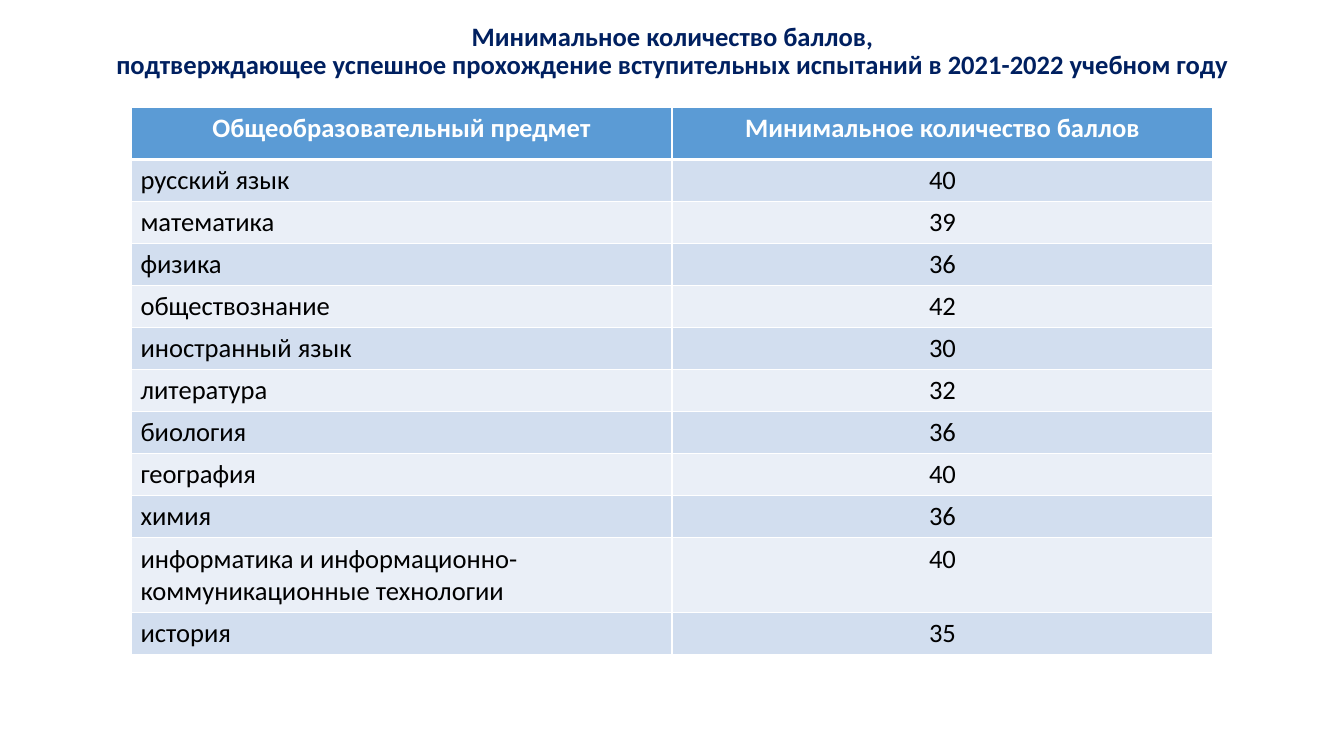
import pptx
import pptx.util
import pptx.dml.color
import pptx.enum.text
import pptx.oxml
import pptx.oxml.ns

Inches = pptx.util.Inches
Align = pptx.enum.text.PP_ALIGN

TITLE = (
    "Минимальное количество баллов,",
    "подтверждающее успешное прохождение вступительных испытаний в 2021-2022 учебном году",
)
HEADS = ("Общеобразовательный предмет", "Минимальное количество баллов")
SCORES = (
    ("русский язык", 40),
    ("математика", 39),
    ("физика", 36),
    ("обществознание", 42),
    ("иностранный язык", 30),
    ("литература", 32),
    ("биология", 36),
    ("география", 40),
    ("химия", 36),
    ("информатика и информационно-коммуникационные технологии", 40),
    ("история", 35),
)
THEME = {
    "font": "Calibri", "size": 20,
    "title": "002060", "head": "5B9BD5", "bands": ("D2DEEF", "EAEFF7"),
    "light": "FFFFFF", "dark": "000000", "thin": 1, "thick": 3,
}
HEAD_H, ROW_H, TALL_H = 0.55, 0.44, 0.78
COL_W = 5.66
WRAP = 40  # longest subject that fits on one line, in letters


def color(name):
    return pptx.dml.color.RGBColor.from_string(name)


def style(para, tint, bold, align):
    para.alignment = align
    font = para.font
    font.name = THEME["font"]
    font.size = pptx.util.Pt(THEME["size"])
    font.bold = bold
    font.color.rgb = color(tint)


def border(cell, top, bottom):
    """Draw the four cell edges; call before the fill is set."""
    props = cell._tc.get_or_add_tcPr()
    thin = THEME["thin"]
    for side, width in (("L", thin), ("R", thin), ("T", top), ("B", bottom)):
        props.append(pptx.oxml.parse_xml(
            f'<a:ln{side} {pptx.oxml.ns.nsdecls("a")} w="{pptx.util.Pt(width)}">'
            f'<a:solidFill><a:srgbClr val="{THEME["light"]}"/></a:solidFill>'
            f'</a:ln{side}>'))


def add_title(slide):
    box = slide.shapes.add_textbox(
        Inches(0.97), Inches(0.13), Inches(12.13), Inches(0.83))
    frame = box.text_frame
    frame.word_wrap = True
    frame.vertical_anchor = pptx.enum.text.MSO_ANCHOR.MIDDLE
    para = frame.paragraphs[0]
    para.text = "\v".join(TITLE)
    para.line_spacing = 0.9
    style(para, THEME["title"], True, Align.CENTER)


def add_scores(slide):
    rows = (HEADS,) + SCORES
    heights = [HEAD_H] + [TALL_H if len(name) > WRAP else ROW_H for name, _ in SCORES]
    table = slide.shapes.add_table(
        len(rows), len(HEADS), Inches(1.37), Inches(1.12),
        Inches(COL_W * len(HEADS)), Inches(sum(heights))).table
    for col in table.columns:
        col.width = Inches(COL_W)
    for r, (row, height) in enumerate(zip(rows, heights)):
        table.rows[r].height = Inches(height)
        head = r == 0
        fill = THEME["head"] if head else THEME["bands"][(r - 1) % 2]
        tint = THEME["light"] if head else THEME["dark"]
        top = THEME["thick"] if r == 1 else THEME["thin"]
        bottom = THEME["thick"] if head else THEME["thin"]
        for c, value in enumerate(row):
            cell = table.cell(r, c)
            border(cell, top, bottom)
            cell.fill.solid()
            cell.fill.fore_color.rgb = color(fill)
            cell.text = str(value)
            align = Align.CENTER if head or c else Align.LEFT
            style(cell.text_frame.paragraphs[0], tint, head, align)


def main():
    deck = pptx.Presentation()
    deck.slide_width, deck.slide_height = Inches(14.06), Inches(7.91)
    slide = deck.slides.add_slide(deck.slide_layouts[6])
    add_title(slide)
    add_scores(slide)
    deck.save("out.pptx")


if __name__ == "__main__":
    main()
